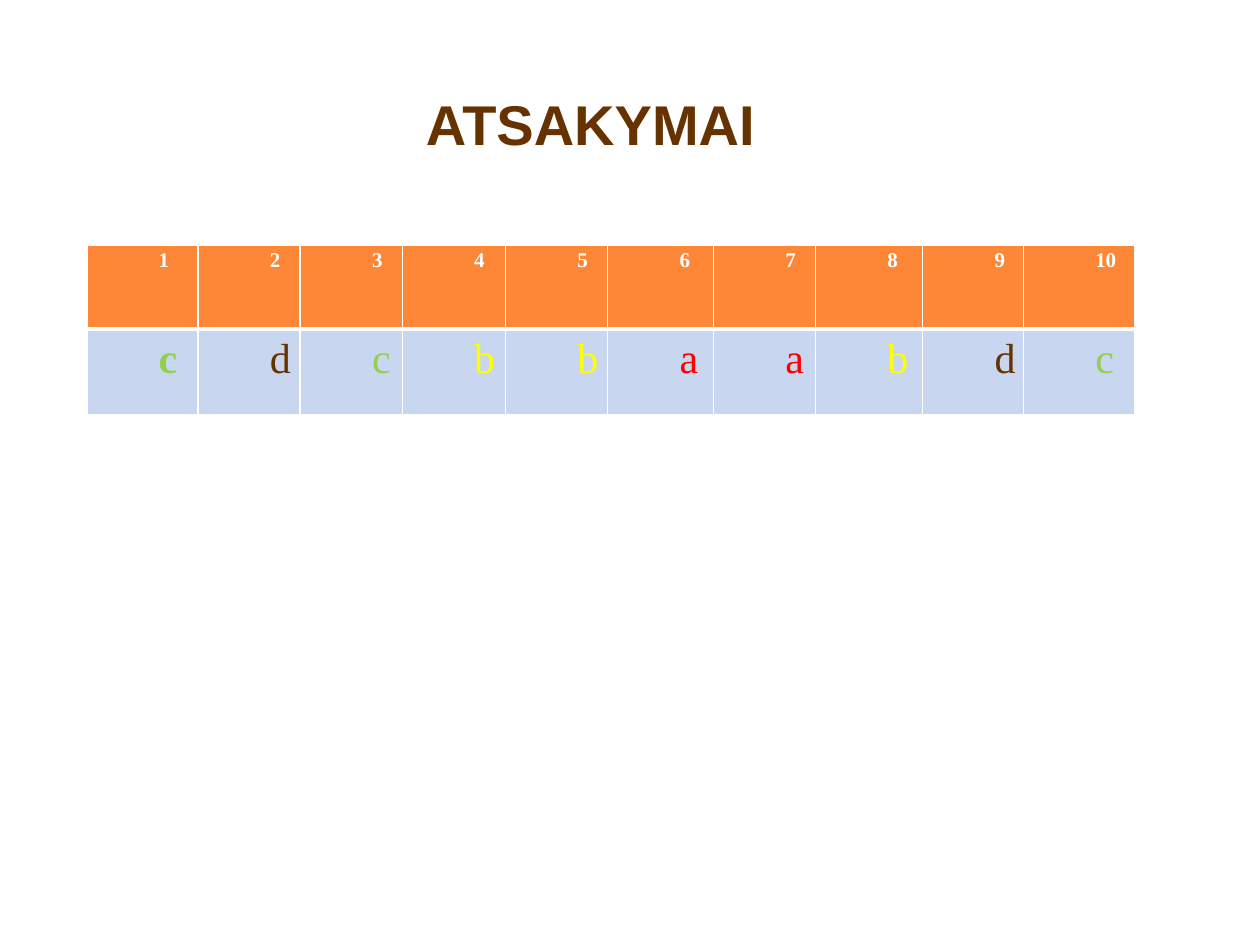
from pptx import Presentation
from pptx.dml.color import RGBColor
from pptx.enum.text import MSO_ANCHOR, PP_ALIGN
from pptx.oxml.ns import qn
from pptx.util import Cm, Pt
from lxml.etree import SubElement

WIDTHS = [2.24, 2.06, 2.06, 2.08, 2.06, 2.13, 2.06, 2.16, 2.03, 2.24]
HEIGHTS = [1.68, 1.73]
KEYS = "cdcbbaabdc"
TINTS = {"a": "FF0000", "b": "FFFF00", "c": "92D050", "d": "663300"}


def color(code):
    return RGBColor.from_string(code)


def add_run(para, text, font, size, code, bold):
    run = para.add_run()
    run.text = text
    run.font.name = font
    run.font.size = Pt(size)
    run.font.bold = bold
    run.font.color.rgb = color(code)


def add_title(slide, text):
    title = slide.shapes.title
    title.left, title.top = Cm(1.3), Cm(1.52)
    title.width, title.height = Cm(21.21), Cm(1.93)
    title.text_frame.vertical_anchor = MSO_ANCHOR.MIDDLE
    para = title.text_frame.paragraphs[0]
    para.alignment = PP_ALIGN.CENTER
    add_run(para, text, "Arial", 32, "663300", True)


def add_edge(cell, side, width):
    props = cell._tc.get_or_add_tcPr()
    line = SubElement(props, qn("a:ln" + side), w=str(Pt(width)))
    fill = SubElement(line, qn("a:solidFill"))
    SubElement(fill, qn("a:srgbClr"), val="FFFFFF")


def fill_cell(cell, text, back, edges, size, code, bold):
    for side, width in zip("LRTB", edges):
        add_edge(cell, side, width)
    cell.fill.solid()
    cell.fill.fore_color.rgb = color(back)
    cell.margin_left = cell.margin_right = Cm(0.18)
    cell.margin_top = cell.margin_bottom = 0
    para = cell.text_frame.paragraphs[0]
    para.line_spacing = 1.15
    props = para._p.get_or_add_pPr()
    props.set("marL", str(Cm(1.27)))
    props.set("indent", "0")
    add_run(para, text, "Times New Roman", size, code, bold)


def add_grid(slide):
    frame = slide.shapes.add_table(
        2, len(KEYS), Cm(1.75), Cm(4.95), Cm(sum(WIDTHS)), Cm(sum(HEIGHTS)))
    table = frame.table
    for col, width in zip(table.columns, WIDTHS):
        col.width = Cm(width)
    for row, height in zip(table.rows, HEIGHTS):
        row.height = Cm(height)
    for i, key in enumerate(KEYS):
        fill_cell(table.cell(0, i), str(i + 1), "FE8637", (1, 1, 1, 3),
                  12, "FFFFFF", True)
        fill_cell(table.cell(1, i), key, "C8D6F0", (1, 1, 3, 1),
                  24, TINTS[key], i == 0)


def main():
    deck = Presentation()
    deck.slide_width, deck.slide_height = Cm(25.4), Cm(19.05)
    slide = deck.slides.add_slide(deck.slide_layouts[5])
    add_grid(slide)
    add_title(slide, "ATSAKYMAI")
    deck.save("out.pptx")


if __name__ == "__main__":
    main()
